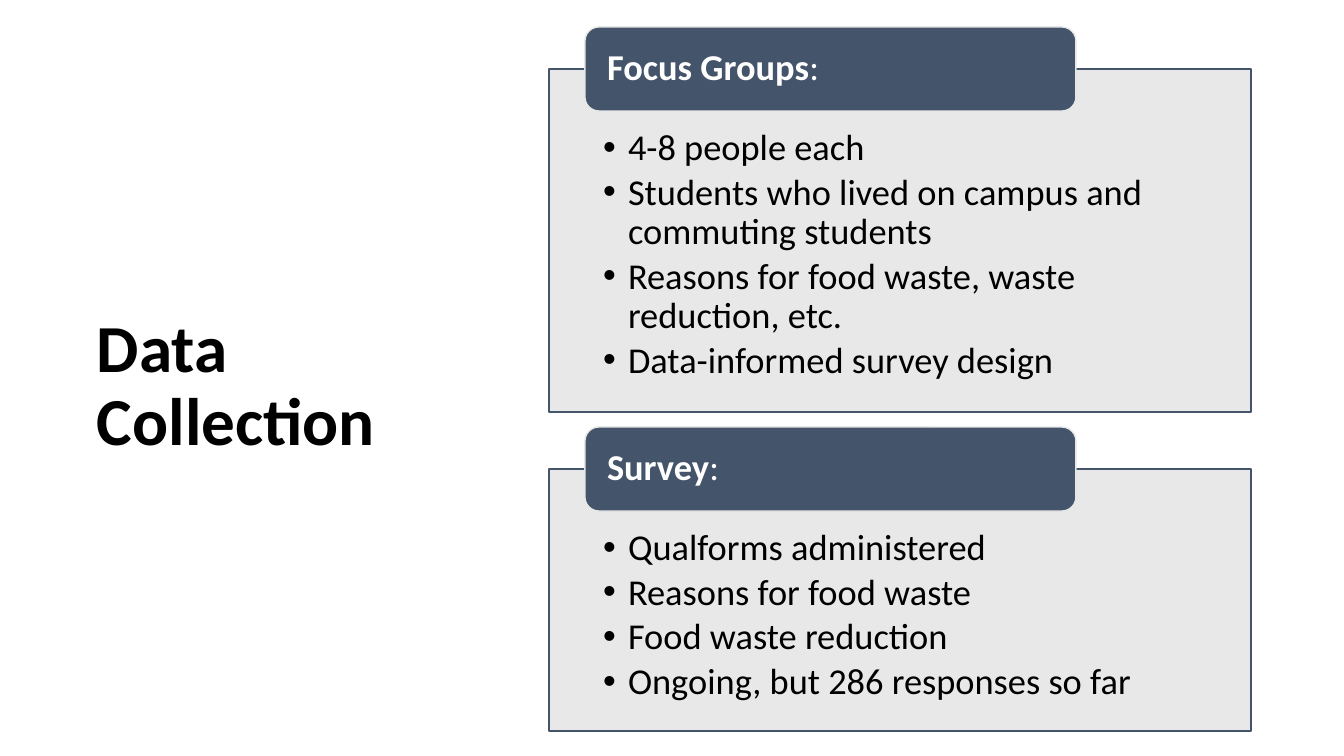
"""Build the Data Collection slide: a title beside two tabbed panels."""
from lxml import etree
from pptx import Presentation
from pptx.dml.color import RGBColor
from pptx.enum.shapes import MSO_SHAPE as Shape
from pptx.enum.text import MSO_ANCHOR as Anchor, PP_ALIGN as Align
from pptx.oxml.ns import qn
from pptx.util import Emu, Pt

TITLE = "Data Collection"
PANELS = [
    ("Focus Groups", 343, [
        "4-8 people each",
        "Students who lived on campus and commuting students",
        "Reasons for food waste, waste reduction, etc.",
        "Data-informed survey design",
    ]),
    ("Survey", 262, [
        "Qualforms administered",
        "Reasons for food waste",
        "Food waste reduction",
        "Ongoing, but 286 responses so far",
    ]),
]
COLORS = {"slate": "44546A", "grey": "E7E6E6", "black": "000000", "white": "FFFFFF"}
FONT = "Calibri"
SLIDE_W, SLIDE_H = 1344, 756
TITLE_BOX = (87, 93, 387, 589)
PANEL_LEFT, PANEL_TOP, PANEL_W, PANEL_GAP = 549, 69, 702, 57
TAB_LEFT, TAB_W, TAB_H = 585, 491, 84
BULLET_INDENT = 25


def px(length):
    return Emu(round(length * 914400 / 100.8))


def color(name):
    return RGBColor.from_string(COLORS[name])


def set_frame(shape, anchor, margins):
    frame = shape.text_frame
    settings = {"word_wrap": True, "vertical_anchor": anchor}
    sides = ("margin_left", "margin_top", "margin_right", "margin_bottom")
    settings.update(zip(sides, map(px, margins)))
    for name, value in settings.items():
        setattr(frame, name, value)
    return frame


def write(paragraph, text, size, ink, bold=False):
    for name, value in {"alignment": Align.LEFT, "line_spacing": 0.9}.items():
        setattr(paragraph, name, value)
    run = paragraph.add_run()
    run.text = text
    for name, value in {"name": FONT, "size": Pt(size), "bold": bold}.items():
        setattr(run.font, name, value)
    run.font.color.rgb = color(ink)


def add_block(slide, kind, box, fill, line):
    block = slide.shapes.add_shape(kind, *map(px, box))
    block.shadow.inherit = False
    block.fill.solid()
    block.fill.fore_color.rgb = color(fill)
    block.line.color.rgb = color(line)
    block.line.width = Pt(1)
    return block


def add_panel(slide, top, height, items):
    box = (PANEL_LEFT, top, PANEL_W, height)
    panel = add_block(slide, Shape.RECTANGLE, box, "grey", "slate")
    fill_color = panel.fill._xPr.find(qn("a:solidFill"))[0]
    etree.SubElement(fill_color, qn("a:alpha"), val="90000")
    frame = set_frame(panel, Anchor.TOP, (54, 60, 54, 20))
    for index, item in enumerate(items):
        paragraph = frame.add_paragraph() if index else frame.paragraphs[0]
        write(paragraph, item, 26, "black")
        paragraph.space_after = Pt(3.9)
        properties = paragraph._p.get_or_add_pPr()
        properties.set("marL", str(px(BULLET_INDENT)))
        properties.set("indent", str(-px(BULLET_INDENT)))
        etree.SubElement(properties, qn("a:buFont"), typeface="Arial")
        etree.SubElement(properties, qn("a:buChar"), char="•")


def add_tab(slide, panel_top, heading):
    box = (TAB_LEFT, panel_top - TAB_H / 2, TAB_W, TAB_H)
    tab = add_block(slide, Shape.ROUNDED_RECTANGLE, box, "slate", "grey")
    paragraph = set_frame(tab, Anchor.MIDDLE, (18, 0, 18, 0)).paragraphs[0]
    write(paragraph, heading, 26, "white", bold=True)
    write(paragraph, ":", 26, "white")


def main():
    deck = Presentation()
    deck.slide_width, deck.slide_height = px(SLIDE_W), px(SLIDE_H)
    slide = deck.slides.add_slide(deck.slide_layouts[6])
    title = slide.shapes.add_textbox(*map(px, TITLE_BOX))
    title_frame = set_frame(title, Anchor.MIDDLE, (10, 5, 10, 5))
    write(title_frame.paragraphs[0], TITLE, 48, "black", bold=True)
    top = PANEL_TOP
    for heading, height, items in PANELS:
        add_panel(slide, top, height, items)
        add_tab(slide, top, heading)
        top += height + PANEL_GAP
    deck.save("out.pptx")


if __name__ == "__main__":
    main()
